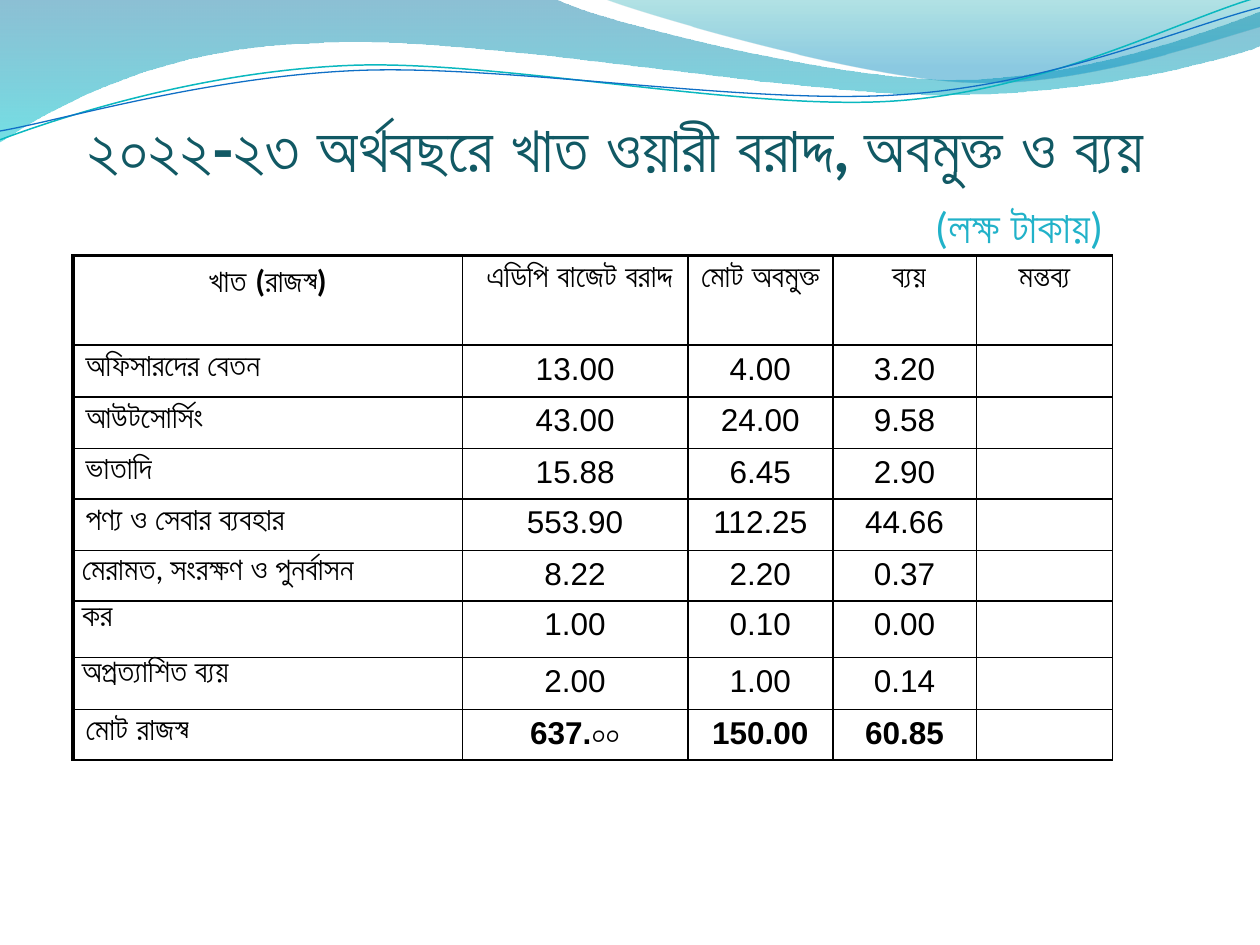
from dataclasses import dataclass
from typing import Any, NamedTuple

from lxml.etree import SubElement
from pptx import Presentation
from pptx.dml.color import RGBColor as Rgb
from pptx.enum.text import MSO_ANCHOR as Anchor, PP_ALIGN as Align
from pptx.oxml import parse_xml
from pptx.oxml.ns import nsdecls, qn
from pptx.util import Inches, Pt


@dataclass(frozen=True)
class Theme:
    face: str = "Calibri"
    digit: str = "Arial"
    ink: str = "000000"
    title: str = "115964"
    unit: str = "21B2C9"
    big: float = 36.9
    mid: float = 25.2
    body: float = 18
    thick: float = 2.25
    thin: float = 1


class Stop(NamedTuple):
    color: str
    alpha: int  # percent
    at: float


class Wave(NamedTuple):
    start: tuple
    steps: list  # a pair is a line end, six numbers are a curve
    stops: tuple = ()
    color: str = ""
    width: float = 0


class Label(NamedTuple):
    text: str
    box: tuple
    insets: tuple
    size: float
    color: str
    bold: bool
    align: Any
    anchor: Any


LOOK = Theme()

# Header waves, in inches
WAVES = [
    Wave((0, 0), [(4.4, -0.01), (4.76, 0.17, 6.64, 0.63, 7.58, 0.63),
                  (8.53, 0.63, 9.58, 0.26, 10, 0.09), (10.01, 0.36),
                  (9.83, 0.44, 8.7, 0.76, 7.46, 0.75),
                  (6.22, 0.75, 3.82, 0.28, 2.57, 0.34),
                  (1.29, 0.36, 0.46, 0.83, -0.01, 1.13), (0, 0)],
         (Stop("0074A1", 45, 0), Stop("00C6CF", 55, 1))),
    Wave((4.79, -0.01), [(5.09, 0.11, 6.82, 0.62, 7.69, 0.65),
                         (8.56, 0.69, 9.61, 0.32, 10, 0.21),
                         (10, 0), (4.79, -0.01)],
         (Stop("00A1A9", 30, 0), Stop("008BBF", 45, 0.8))),
    Wave((0, 1.11), [(0.48, 0.93, 1.58, 0.57, 2.77, 0.52),
                     (3.95, 0.47, 5.93, 0.89, 7.13, 0.8),
                     (8.33, 0.71, 9.38, 0.15, 9.98, -0.02)],
         color="0AB8BF", width=0.85),
    Wave((0, 1.04), [(0.47, 0.96, 1.64, 0.61, 2.83, 0.56),
                     (4.03, 0.51, 5.97, 0.84, 7.17, 0.75),
                     (8.36, 0.67, 9.41, 0.21, 10, 0.06)],
         color="0F6FC6", width=0.75),
]

LABELS = [
    Label("(লক্ষ টাকায়)", (7.42, 1.58, 1.42, 0.42), (0, 0.05, 0, 0),
          LOOK.mid, LOOK.unit, False, Align.LEFT, Anchor.BOTTOM),
    Label("২০২২-২৩ অর্থবছরে খাত ওয়ারী বরাদ্দ, অবমুক্ত ও ব্যয় ",
          (0.58, 0.83, 8.75, 0.67), (0.1, 0.05, 0.1, 0.05),
          LOOK.big, LOOK.title, True, Align.CENTER, Anchor.MIDDLE),
]

# Budget table
COLS = [3.09, 1.79, 1.15, 1.14, 1.08]
HEIGHTS = [0.71, 0.41, 0.41, 0.4, 0.41, 0.4, 0.45, 0.41, 0.4]
TIGHT = (5, 6, 7)  # rows whose first cell has no top margin
ROWS = [
    ("খাত (রাজস্ব)", " এডিপি বাজেট বরাদ্দ", "মোট অবমুক্ত", " ব্যয়", "মন্তব্য"),
    ("অফিসারদের বেতন", "13.00", "4.00", "3.20", ""),
    ("আউটসোর্সিং", "43.00", "24.00", "9.58", ""),
    ("ভাতাদি", "15.88", "6.45", "2.90", ""),
    ("পণ্য ও সেবার ব্যবহার", "553.90", "112.25", "44.66", ""),
    ("মেরামত, সংরক্ষণ ও পুনর্বাসন", "8.22", "2.20", "0.37", ""),
    ("কর", "1.00", "0.10", "0.00", ""),
    ("অপ্রত্যাশিত ব্যয়", "2.00", "1.00", "0.14", ""),
    ("মোট রাজস্ব", "637.০০", "150.00", "60.85", ""),
]


def bend(shape: Any, wave: Wave) -> None:
    """Turn the straight sides of a freeform into the curves of its wave."""
    sides = list(shape._element.iter(qn("a:lnTo")))
    for side, step in zip(sides, wave.steps):
        if len(step) == 2:
            continue
        side.tag = qn("a:cubicBezTo")
        side.clear()
        for x, y in zip(step[::2], step[1::2]):
            SubElement(side, qn("a:pt"), x=str(Inches(x) - shape.left),
                       y=str(Inches(y) - shape.top))


def draw_wave(slide: Any, wave: Wave) -> None:
    pen = slide.shapes.build_freeform(*map(Inches, wave.start))
    ends = [tuple(map(Inches, step[-2:])) for step in wave.steps]
    pen.add_line_segments(ends, close=bool(wave.stops))
    shape = pen.convert_to_shape()
    bend(shape, wave)
    shape.shadow.inherit = False
    if not wave.stops:
        shape.fill.background()
        shape.line.color.rgb = Rgb.from_string(wave.color)
        shape.line.width = Pt(wave.width)
        return
    shape.line.fill.background()
    shape.fill.gradient()
    shape.fill.gradient_angle = 270
    for slot, stop in zip(shape.fill.gradient_stops, wave.stops):
        slot.color.rgb = Rgb.from_string(stop.color)
        slot.position = stop.at
    for tint, stop in zip(shape._element.iter(qn("a:srgbClr")), wave.stops):
        SubElement(tint, qn("a:alpha"), val=str(stop.alpha * 1000))


def style(para: Any, color: str, align: Any, **form: Any) -> None:
    para.alignment = align
    for font in [para.font] + [run.font for run in para.runs]:
        for key, val in form.items():
            setattr(font, key, val)
        font.color.rgb = Rgb.from_string(color)


def draw_label(slide: Any, label: Label) -> None:
    frame = slide.shapes.add_textbox(*map(Inches, label.box)).text_frame
    sides = ("left", "top", "right", "bottom")
    form = {f"margin_{s}": Inches(v) for s, v in zip(sides, label.insets)}
    form |= {"word_wrap": True, "vertical_anchor": label.anchor, "text": label.text}
    for key, val in form.items():
        setattr(frame, key, val)
    style(frame.paragraphs[0], label.color, label.align,
          name=LOOK.face, size=Pt(label.size), bold=label.bold)


def edge(cell: Any, widths: dict) -> None:
    props = cell._tc.get_or_add_tcPr()
    for i, (side, width) in enumerate(widths.items()):
        props.insert(i, parse_xml(
            f'<a:ln{side} {nsdecls("a")} w="{Pt(width)}"><a:solidFill>'
            f'<a:srgbClr val="{LOOK.ink}"/></a:solidFill></a:ln{side}>'))


def draw_table(slide: Any) -> None:
    spot = map(Inches, (0.58, 2.03, sum(COLS), sum(HEIGHTS)))
    table = slide.shapes.add_table(len(ROWS), len(COLS), *spot).table
    table.first_row = table.horz_banding = False
    for col, width in zip(table.columns, COLS):
        col.width = Inches(width)
    for r, (row, texts) in enumerate(zip(table.rows, ROWS)):
        row.height = Inches(HEIGHTS[r])
        for c, (cell, text) in enumerate(zip(row.cells, texts)):
            cell.text = text
            cell.fill.background()
            if c == 0 and r in TIGHT:
                cell.margin_top = cell.margin_bottom = 0
                cell.margin_left = cell.margin_right = Inches(0.07)
            style(cell.text_frame.paragraphs[0], LOOK.ink,
                  Align.LEFT if r and not c else Align.CENTER,
                  name=LOOK.digit if r and c and text else LOOK.face,
                  size=Pt(LOOK.body), bold=r in (0, len(ROWS) - 1))
            edge(cell, {"L": LOOK.thin if c else LOOK.thick, "R": LOOK.thin,
                        "T": LOOK.thin if r else LOOK.thick, "B": LOOK.thin})


def main() -> None:
    deck = Presentation()
    deck.slide_width, deck.slide_height = Inches(10), Inches(7.5)
    slide = deck.slides.add_slide(deck.slide_layouts[6])
    for wave in WAVES:
        draw_wave(slide, wave)
    unit, title = LABELS
    draw_label(slide, unit)
    draw_table(slide)
    draw_label(slide, title)
    deck.save("out.pptx")


if __name__ == "__main__":
    main()
